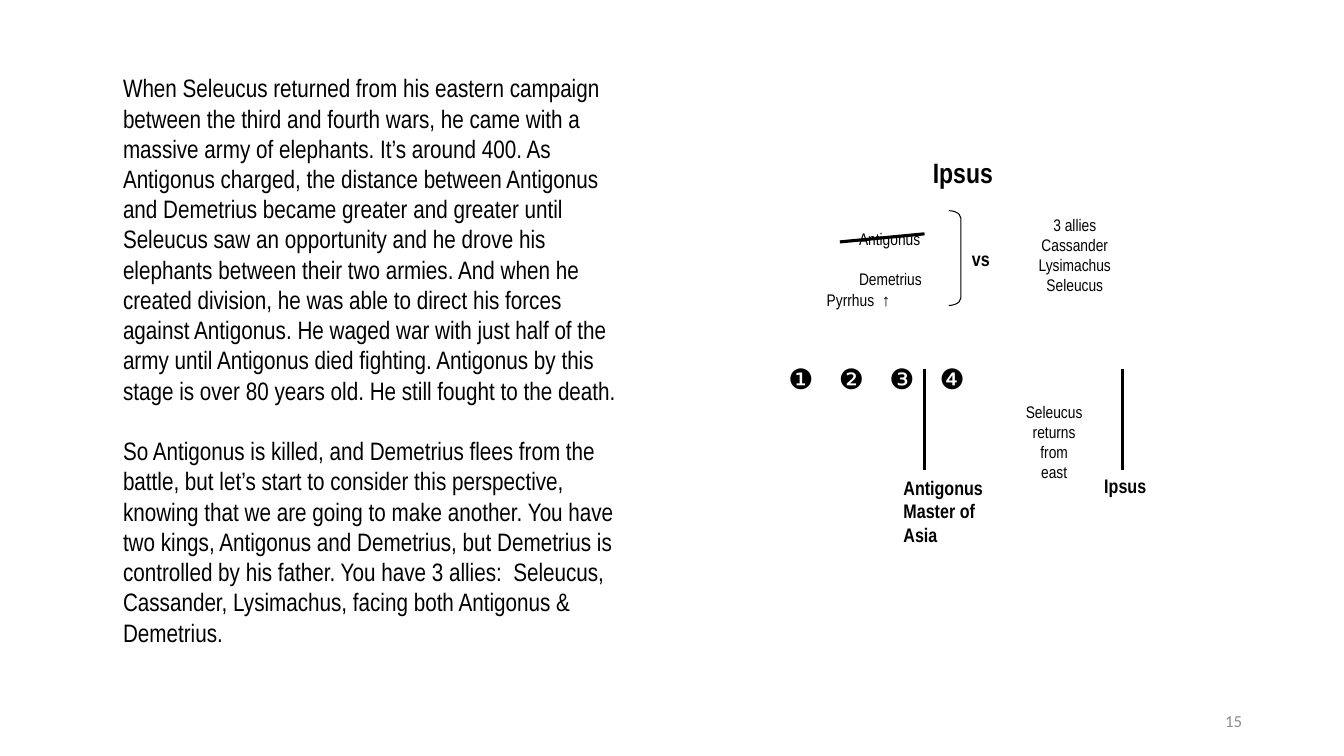
from lxml.etree import SubElement
from pptx import Presentation
from pptx.dml.color import RGBColor
from pptx.enum.shapes import MSO_CONNECTOR as Connector, MSO_SHAPE as Preset
from pptx.enum.text import MSO_ANCHOR as Anchor, MSO_AUTO_SIZE as AutoSize, PP_ALIGN as Align
from pptx.oxml.ns import qn
from pptx.util import Inches, Pt

THEME = {
    "ink": RGBColor(0, 0, 0),
    "muted": RGBColor(0x8C, 0x8C, 0x8C),
    "narrow": "Arial Narrow",
    "heading": 20, "body": 18, "label": 14, "note": 12,
}

STORY = [
    "When Seleucus returned from his eastern campaign between the third and fourth wars, "
    "he came with a massive army of elephants. It’s around 400. As Antigonus charged, the "
    "distance between Antigonus and Demetrius became greater and greater until Seleucus saw "
    "an opportunity and he drove his elephants between their two armies. And when he created "
    "division, he was able to direct his forces against Antigonus. He waged war with just half "
    "of the army until Antigonus died fighting. Antigonus by this stage is over 80 years old. "
    "He still fought to the death.",
    "So Antigonus is killed, and Demetrius flees from the battle, but let’s start to consider "
    "this perspective, knowing that we are going to make another. You have two kings, Antigonus "
    "and Demetrius, but Demetrius is controlled by his father. You have 3 allies:  Seleucus, "
    "Cassander, Lysimachus, facing both Antigonus & Demetrius.",
]
BATTLE = ["Ipsus"]
WARS = ["❶\t❷\t❸\t❹"]

NOTE = {"size": THEME["note"]}
CENTRED_NOTE = {"size": THEME["note"], "align": Align.CENTER}
LABEL = {"size": THEME["label"], "bold": True}
HEADING = {"size": THEME["heading"], "bold": True, "align": Align.CENTER}

# lines, (left, top, width, height) in inches, format
LABELS = [
    (["Antigonus"], (8.48, 2.23, 0.9, 0.28), NOTE),
    (["Demetrius"], (8.48, 2.63, 0.9, 0.28), NOTE),
    (["Pyrrhus  ↑"], (8.16, 2.83, 0.9, 0.28), NOTE),
    (["3 allies", "Cassander", "Lysimachus", "Seleucus"], (10.1, 2.09, 1.12, 0.94), CENTRED_NOTE),
    (["vs"], (9.6, 2.41, 0.38, 0.31), LABEL),
    (WARS, (7.78, 3.55, 3.63, 0.4),
     {"size": THEME["heading"], "font": "Arial", "anchor": Anchor.MIDDLE}),
    (["Seleucus", "returns", "from", "east"], (10.11, 3.94, 0.69, 0.88), CENTRED_NOTE),
    (["Antigonus", "Master of Asia"], (8.92, 4.68, 0.88, 0.73), LABEL),
    (BATTLE, (10.81, 4.66, 0.6, 0.31), {**LABEL, "align": Align.RIGHT}),
    (["15"], (9.42, 6.95, 2.94, 0.4),
     {"size": THEME["note"], "font": "Calibri", "color": THEME["muted"],
      "align": Align.RIGHT, "anchor": Anchor.MIDDLE}),
]

# start, end, width in points
STROKES = [
    ((8.33, 2.4), (9.17, 2.32), 2.25),
    ((9.17, 3.66), (9.17, 4.66), 2),
    ((11.13, 3.66), (11.13, 4.66), 2),
]


def place(shape, box):
    for side, length in zip(("left", "top", "width", "height"), box):
        setattr(shape, side, Inches(length))


def write(frame, lines, size, font=THEME["narrow"], color=THEME["ink"], bold=False,
          align=Align.LEFT, anchor=Anchor.TOP, inset=0.04):
    margins = {f"margin_{side}": Inches(inset) for side in ("left", "top", "right", "bottom")}
    frame_format = {"word_wrap": True, "auto_size": AutoSize.NONE, "vertical_anchor": anchor, **margins}
    for name, setting in frame_format.items():
        setattr(frame, name, setting)
    frame.text = "\n".join(lines)
    for paragraph in frame.paragraphs:
        paragraph.alignment = align
        for run in paragraph.runs:
            for name, setting in {"name": font, "size": Pt(size), "bold": bold}.items():
                setattr(run.font, name, setting)
            run.font.color.rgb = color


def write_story(body):
    """Fill the body as unbulleted paragraphs, one blank line's height apart."""
    place(body, (1.12, 0.67, 5.13, 6.22))
    write(body.text_frame, STORY, THEME["body"], inset=0.1)
    body.text_frame.margin_top = body.text_frame.margin_bottom = Inches(0.05)
    for paragraph in body.text_frame.paragraphs:
        paragraph.space_before = Pt(0)
        paragraph.space_after = Pt(21.6)
        properties = paragraph._p.get_or_add_pPr()
        properties.set("marL", "0")
        properties.set("indent", "0")
        SubElement(properties, qn("a:buNone"))


def add_stroke(shapes, start, end, width):
    stroke = shapes.add_connector(Connector.STRAIGHT, *map(Inches, start + end))
    stroke.line.color.rgb = THEME["ink"]
    stroke.line.width = Pt(width)
    SubElement(stroke._element.spPr, qn("a:effectLst"))


def add_bracket(shapes):
    bracket = shapes.add_shape(Preset.LEFT_BRACKET, *map(Inches, (9.41, 2.09, 0.12, 0.94)))
    bracket.rotation = 180
    bracket.adjustments[0] = 0.625
    bracket.shadow.inherit = False
    bracket.fill.background()
    bracket.line.color.rgb = THEME["ink"]
    bracket.line.width = Pt(0.75)


def main():
    deck = Presentation()
    deck.slide_width, deck.slide_height = Inches(13.33), Inches(7.5)
    slide = deck.slides.add_slide(deck.slide_layouts[1])
    shapes = slide.shapes

    place(shapes.title, (7.86, 1.5, 3.38, 0.4))
    write(shapes.title.text_frame, BATTLE, **HEADING)
    write_story(slide.placeholders[1])
    add_bracket(shapes)
    for lines, box, text_format in LABELS:
        label = shapes.add_textbox(*map(Inches, box))
        write(label.text_frame, lines, **text_format)
    for start, end, width in STROKES:
        add_stroke(shapes, start, end, width)

    deck.save("out.pptx")


if __name__ == "__main__":
    main()
